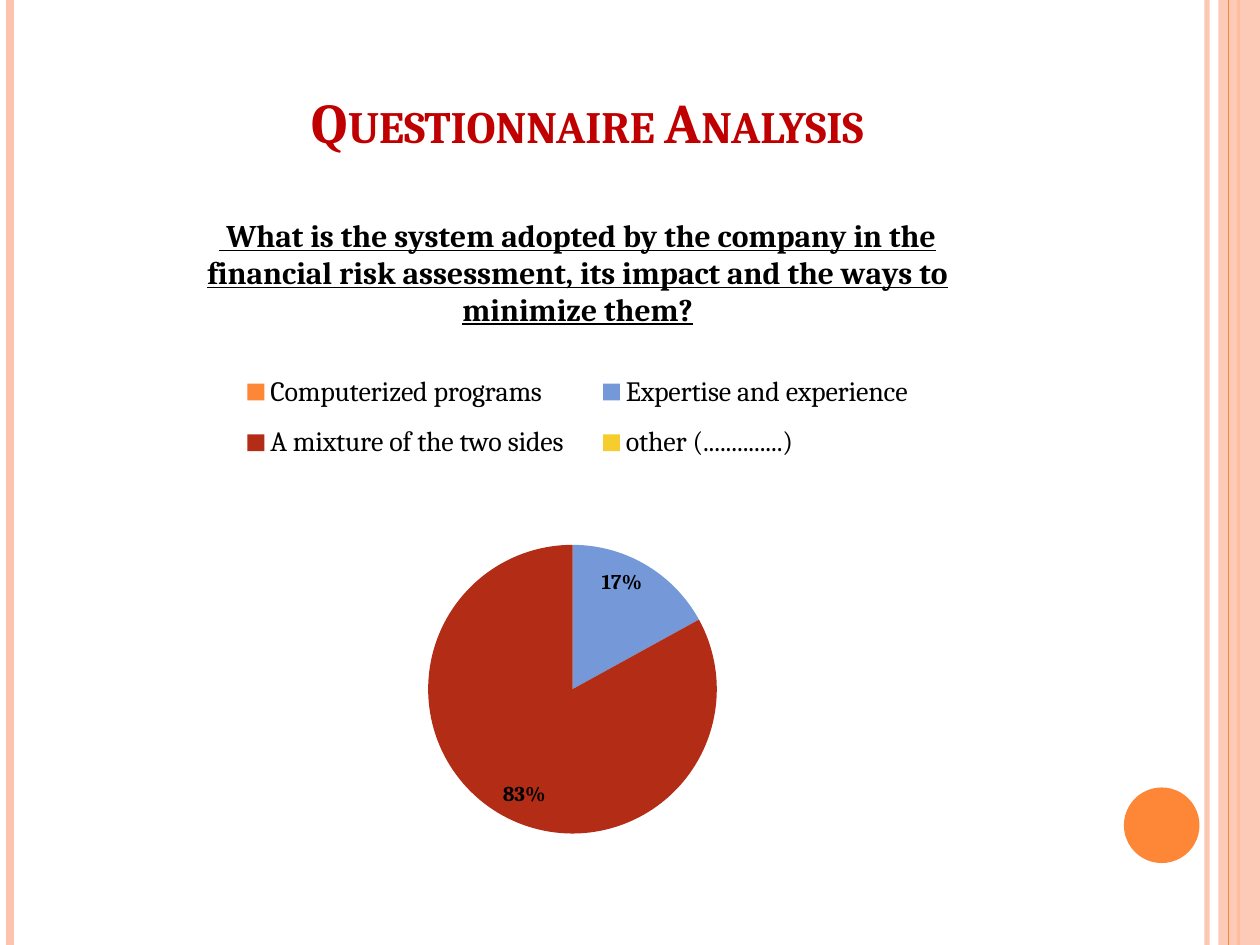
import pptx
import pptx.chart.data
import pptx.dml.color
import pptx.enum.chart
import pptx.enum.shapes
import pptx.enum.text
import pptx.oxml
import pptx.oxml.ns
import pptx.util
from dataclasses import dataclass

Inches = pptx.util.Inches
Pt = pptx.util.Pt


@dataclass(frozen=True)
class Theme:
    font: str = "Cambria"
    heading: str = "C00000"
    text: str = "000000"
    accent: str = "FE8637"
    pale: str = "FEC3AE"
    slices: tuple = ("FE8637", "7598D9", "B32C16", "F5CD2D")
    title_size: int = 32
    question_size: int = 18
    legend_size: int = 16
    label_size: int = 12
    chart_size: int = 10


THEME = Theme()
QUESTION = (" What is the system adopted by the company in the financial risk "
            "assessment, its impact and the ways to minimize them?")
ANSWERS = {
    "Computerized programs": 0,
    "Expertise and experience": 17,
    "A mixture of the two sides": 83,
    "other (..............)": 0,
}


def rgb(color):
    return pptx.dml.color.RGBColor.from_string(color)


def style_font(font, size, color=THEME.text, bold=False):
    font.name = THEME.font
    font.size = Pt(size)
    font.bold = bold
    font.color.rgb = rgb(color)


def set_alpha(shape, percent):
    """Make the first solid colour of a shape partly transparent."""
    color = shape._element.spPr.find(".//" + pptx.oxml.ns.qn("a:srgbClr"))
    alpha = color.makeelement(pptx.oxml.ns.qn("a:alpha"), {"val": str(percent * 1000)})
    color.append(alpha)


def add_stripe(slide, left, width, color, opacity=100):
    """Add a full-height vertical line."""
    line = slide.shapes.add_connector(
        pptx.enum.shapes.MSO_CONNECTOR.STRAIGHT,
        Inches(left), 0, Inches(left), Inches(7.5))
    line.line.color.rgb = rgb(color)
    line.line.width = Pt(width)
    properties = line._element.spPr
    properties.append(properties.makeelement(pptx.oxml.ns.qn("a:effectLst"), {}))
    if opacity < 100:
        set_alpha(line, opacity)


def add_block(slide, kind, left, top, width, height, color):
    shape = slide.shapes.add_shape(
        kind, Inches(left), Inches(top), Inches(width), Inches(height))
    shape.shadow.inherit = False
    shape.fill.solid()
    shape.fill.fore_color.rgb = rgb(color)
    shape.line.fill.background()
    return shape


def add_decoration(slide):
    kinds = pptx.enum.shapes.MSO_SHAPE
    add_stripe(slide, 9.58, 3, THEME.pale, 93)
    add_stripe(slide, 0.08, 4.5, THEME.pale)
    add_stripe(slide, 9.83, 1.5, THEME.accent)
    band = add_block(slide, kinds.RECTANGLE, 9.67, 0, 0.33, 7.5, THEME.pale)
    set_alpha(band, 87)
    add_stripe(slide, 9.75, 0.75, THEME.accent)
    add_block(slide, kinds.OVAL, 8.92, 6.25, 0.6, 0.6, THEME.accent)


def set_title(slide, text):
    title = slide.shapes.title
    title.left, title.top = Inches(0.58), Inches(0.03)
    title.width, title.height = Inches(8.17), Inches(1.25)
    title.text_frame.vertical_anchor = pptx.enum.text.MSO_ANCHOR.BOTTOM
    paragraph = title.text_frame.paragraphs[0]
    paragraph.alignment = pptx.enum.text.PP_ALIGN.CENTER
    run = paragraph.add_run()
    run.text = text
    style_font(run.font, THEME.title_size, THEME.heading, bold=True)
    run.font._element.set("cap", "small")


def set_layout(parent, before, left, top, width, height, inner=False):
    """Place a chart part by fractions of the chart area."""
    target = '<c:layoutTarget val="inner"/>' if inner else ""
    layout = pptx.oxml.parse_xml(
        f'<c:layout {pptx.oxml.ns.nsdecls("c")}><c:manualLayout>{target}'
        '<c:xMode val="edge"/><c:yMode val="edge"/>'
        f'<c:x val="{left}"/><c:y val="{top}"/><c:w val="{width}"/><c:h val="{height}"/>'
        '</c:manualLayout></c:layout>')
    for old in parent.findall(pptx.oxml.ns.qn("c:layout")):
        parent.remove(old)
    parent.find(pptx.oxml.ns.qn(before)).addprevious(layout)


def hide_label(labels, index):
    label = pptx.oxml.parse_xml(
        f'<c:dLbl {pptx.oxml.ns.nsdecls("c")}><c:idx val="{index}"/>'
        '<c:delete val="1"/></c:dLbl>')
    position = len(labels._element.findall(pptx.oxml.ns.qn("c:dLbl")))
    labels._element.insert(position, label)


def style_series(series, values):
    labels = series.data_labels
    labels.show_percentage = True
    labels.show_value = False
    labels.number_format = "0%"
    labels.number_format_is_linked = False
    labels.position = pptx.enum.chart.XL_LABEL_POSITION.INSIDE_END
    style_font(labels.font, THEME.label_size, bold=True)
    for index, (value, color) in enumerate(zip(values, THEME.slices)):
        fill = series.points[index].format.fill
        fill.solid()
        fill.fore_color.rgb = rgb(color)
        if value == 0:
            hide_label(labels, index)


def add_pie(slide, question, answers):
    data = pptx.chart.data.CategoryChartData()
    data.categories = list(answers)
    data.add_series("Series 1", list(answers.values()))
    chart = slide.shapes.add_chart(
        pptx.enum.chart.XL_CHART_TYPE.PIE,
        Inches(0.5), Inches(1.5), Inches(8.17), Inches(5.33), data).chart
    style_font(chart.font, THEME.chart_size)

    # Question above the pie
    chart.has_title = True
    run = chart.chart_title.text_frame.paragraphs[0].add_run()
    run.text = question
    style_font(run.font, THEME.question_size, bold=True)
    run.font.underline = True
    chart.chart_title.include_in_layout = False

    # Legend in two columns
    chart.has_legend = True
    chart.legend.position = pptx.enum.chart.XL_LEGEND_POSITION.TOP
    chart.legend.include_in_layout = False
    style_font(chart.legend.font, THEME.legend_size)
    set_layout(chart.legend._element, "c:overlay", 0.15, 0.25, 0.7, 0.18)

    # Slices
    plot = chart.plots[0]
    plot.vary_by_categories = True
    set_layout(plot._element.getparent(), "c:pieChart", 0.02, 0.53, 0.95, 0.43, inner=True)
    style_series(plot.series[0], answers.values())


def main():
    presentation = pptx.Presentation()
    presentation.slide_width, presentation.slide_height = Inches(10), Inches(7.5)
    slide = presentation.slides.add_slide(presentation.slide_layouts[5])
    add_decoration(slide)
    set_title(slide, "Questionnaire Analysis")
    add_pie(slide, QUESTION, ANSWERS)
    presentation.save("out.pptx")


if __name__ == "__main__":
    main()
